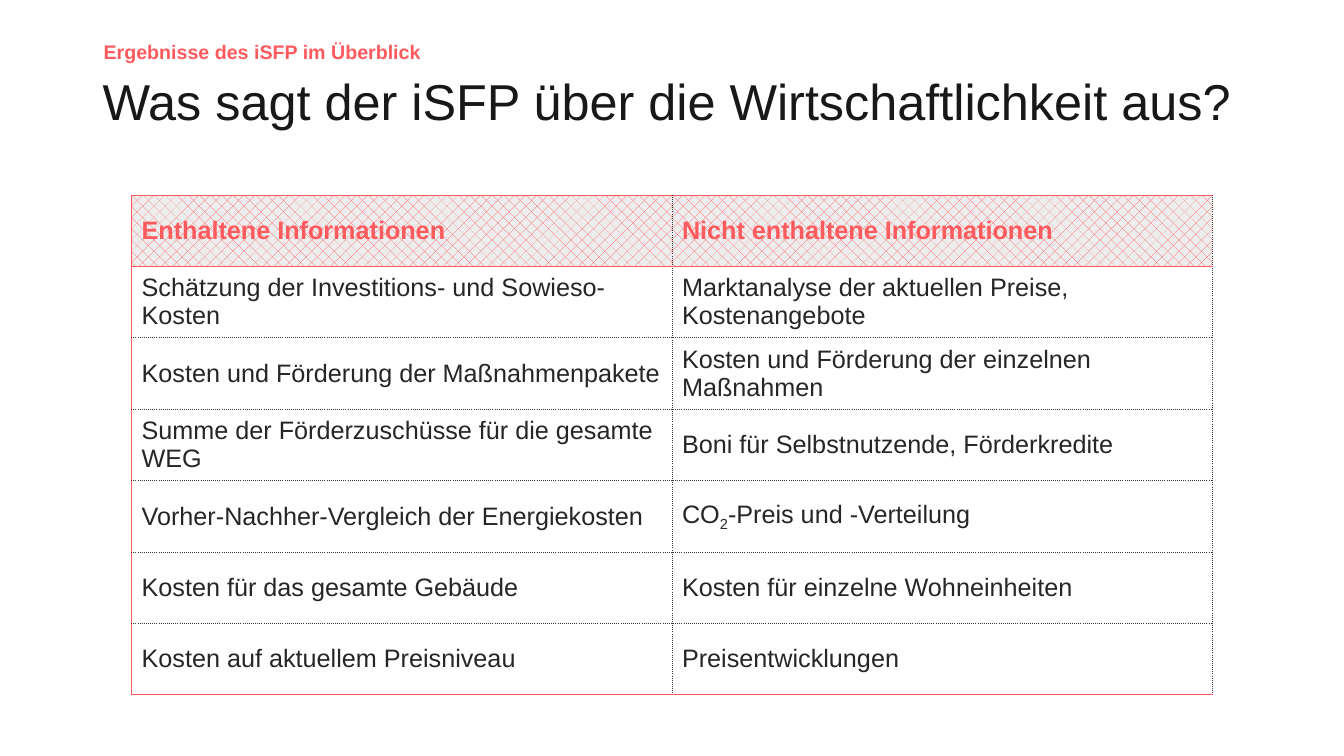
from lxml.etree import SubElement
from pptx import Presentation
from pptx.dml.color import RGBColor
from pptx.enum.dml import MSO_PATTERN
from pptx.enum.text import MSO_ANCHOR
from pptx.oxml.ns import qn
from pptx.util import Pt

HUES = {"coral": "FF5A5E", "grid": "3A3A3A", "body": "262626",
        "title": "181818", "head": "EDEDED", "page": "FFFFFF"}
ROWS = [
    ("Enthaltene Informationen", "Nicht enthaltene Informationen"),
    ("Schätzung der Investitions- und Sowieso-Kosten",
     "Marktanalyse der aktuellen Preise, Kostenangebote"),
    ("Kosten und Förderung der Maßnahmenpakete",
     "Kosten und Förderung der einzelnen Maßnahmen"),
    ("Summe der Förderzuschüsse für die gesamte WEG",
     "Boni für Selbstnutzende, Förderkredite"),
    ("Vorher-Nachher-Vergleich der Energiekosten",
     ("CO", "2", "-Preis und -Verteilung")),
    ("Kosten für das gesamte Gebäude", "Kosten für einzelne Wohneinheiten"),
    ("Kosten auf aktuellem Preisniveau", "Preisentwicklungen"),
]


def hue(name):
    """Return the named colour."""
    return RGBColor.from_string(HUES[name])


def write(frame, text, size=18, color="body", bold=False, lead=None):
    """Write text in one paragraph; odd parts of a tuple are subscripts."""
    para = frame.paragraphs[0]
    if lead:
        para.line_spacing = lead
    parts = (text,) if isinstance(text, str) else text
    for i, part in enumerate(parts):
        run = para.add_run()
        run.text = part
        font = run.font
        font.name, font.size, font.bold = "Arial", Pt(size), bold
        font.color.rgb = hue(color)
        if i % 2:
            run._r.get_or_add_rPr().set("baseline", "-25000")


def label(slide, box, text, **style):
    """Place a line of text in a box."""
    frame = slide.shapes.add_textbox(*map(Pt, box)).text_frame
    frame.word_wrap = True
    write(frame, text, lead=0.9, **style)


def edge(cell, side, red):
    """Draw one cell border, solid coral or dotted grey."""
    line = SubElement(cell._tc.get_or_add_tcPr(), qn(f"a:ln{side}"), w="6350")
    fill = SubElement(line, qn("a:solidFill"))
    SubElement(fill, qn("a:srgbClr"), val=HUES["coral" if red else "grid"])
    SubElement(line, qn("a:prstDash"), val="solid" if red else "sysDot")


def grid(slide, box, rows):
    """Build the two-column comparison table in a box."""
    left, top, width, height = box
    last = len(rows) - 1
    table = slide.shapes.add_table(len(rows), 2, *map(Pt, box)).table
    table.horz_banding = False
    for col in table.columns:
        col.width = Pt(width / 2)
    for r, texts in enumerate(rows):
        table.rows[r].height = Pt(height / len(rows))
        for c, text in enumerate(texts):
            cell = table.cell(r, c)
            cell.vertical_anchor = MSO_ANCHOR.MIDDLE
            reds = {"L": c == 0, "R": False, "T": r < 2, "B": r in (0, last)}
            for side, red in reds.items():
                edge(cell, side, red)
            if r == 0:
                cell.fill.patterned()
                cell.fill.pattern = MSO_PATTERN.PERCENT_25
                cell.fill.fore_color.rgb = hue("coral")
                cell.fill.back_color.rgb = hue("head")
                write(cell.text_frame, text, color="coral", bold=True)
            else:
                cell.fill.background()
                write(cell.text_frame, text)


def header(slide, box):
    """Place the kicker and the title in a box."""
    left, top, width, height = box
    label(slide, (left + 0.7, top, 553, 29),
          "Ergebnisse des iSFP im Überblick",
          size=14, color="coral", bold=True)
    label(slide, (left, top + 25.2, width, height - 25.2),
          "Was sagt der iSFP über die Wirtschaftlichkeit aus?",
          size=36, color="title")


def main():
    """Build and save the slide."""
    deck = Presentation()
    deck.slide_width, deck.slide_height = Pt(960), Pt(540)
    slide = deck.slides.add_slide(deck.slide_layouts[6])
    back = slide.background.fill
    back.solid()
    back.fore_color.rgb = hue("page")
    grid(slide, (94, 139.3, 772, 357), ROWS)
    header(slide, (66.2, 26.6, 828, 68.4))
    deck.save("out.pptx")


if __name__ == "__main__":
    main()
